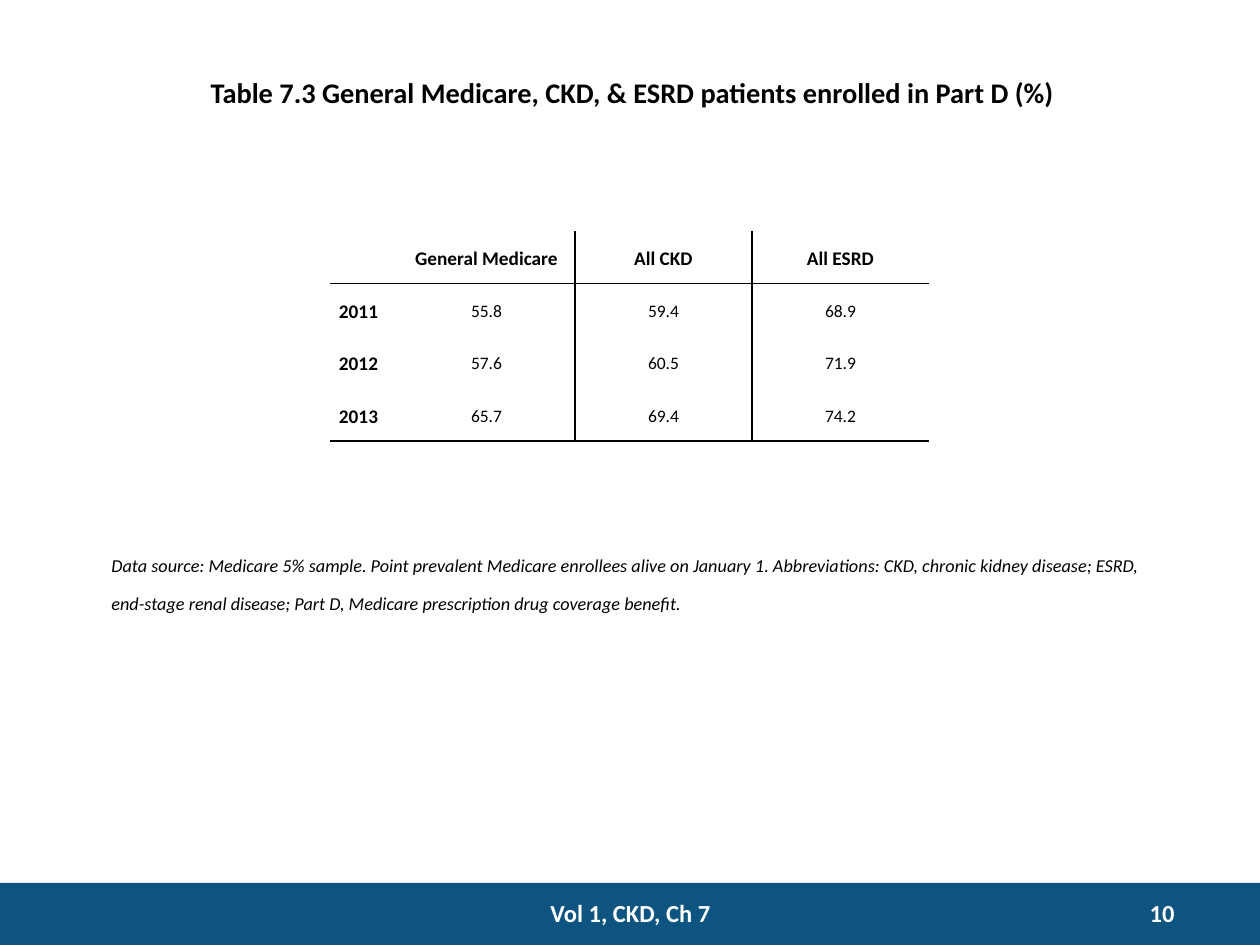
from lxml.etree import SubElement
from pptx import Presentation
from pptx.dml.color import RGBColor
from pptx.enum.shapes import MSO_SHAPE
from pptx.enum.text import MSO_ANCHOR, MSO_AUTO_SIZE, PP_ALIGN
from pptx.oxml.ns import qn
from pptx.util import Inches, Pt

FONT = "Calibri"
COLORS = {"text": "000000", "light": "FFFFFF", "band": "0E5480"}
PIXELS_PER_INCH = 126


def px(length):
    return Inches(length / PIXELS_PER_INCH)


def color(name):
    return RGBColor.from_string(COLORS[name])


def write_text(frame, text, size=14, color_name="text", bold=False, italic=False,
               align=PP_ALIGN.LEFT, spacing=None, raised=False):
    """Put one formatted paragraph into a text frame."""
    paragraph = frame.paragraphs[0]
    paragraph.alignment = align
    paragraph.line_spacing = spacing
    run = paragraph.add_run()
    run.text = text
    font = run.font
    font.name, font.size = FONT, Pt(size)
    font.bold, font.italic = bold, italic
    font.color.rgb = color(color_name)
    if raised:
        run._r.get_or_add_rPr().set("baseline", "30000")


class SlideBuilder:
    def __init__(self, presentation):
        self.slide = presentation.slides.add_slide(presentation.slide_layouts[5])

    def band(self, left, top, width, height):
        shape = self.slide.shapes.add_shape(
            MSO_SHAPE.RECTANGLE, px(left), px(top), px(width), px(height))
        shape.shadow.inherit = False
        shape.fill.solid()
        shape.fill.fore_color.rgb = color("band")
        shape.line.fill.background()

    def fill_box(self, shape, text, **style):
        frame = shape.text_frame
        frame.word_wrap = True
        frame.auto_size = MSO_AUTO_SIZE.NONE
        frame.vertical_anchor = MSO_ANCHOR.TOP
        write_text(frame, text, **style)

    def title(self, left, top, width, height, text, **style):
        shape = self.slide.shapes.title
        shape.left, shape.top = px(left), px(top)
        shape.width, shape.height = px(width), px(height)
        self.fill_box(shape, text, **style)

    def text(self, left, top, width, height, text, **style):
        shape = self.slide.shapes.add_textbox(px(left), px(top), px(width), px(height))
        self.fill_box(shape, text, **style)

    def borders(self, cell, sides):
        """Draw the given sides (of L, R, T, B) and clear the others."""
        properties = cell._tc.get_or_add_tcPr()
        for side in "LRTB":
            line = SubElement(properties, qn(f"a:ln{side}"), w=str(Pt(1)))
            if side in sides:
                fill = SubElement(line, qn("a:solidFill"))
                SubElement(fill, qn("a:srgbClr"), val=COLORS["text"])
            else:
                SubElement(line, qn("a:noFill"))

    def table(self, left, top, widths, height, rows):
        last_row, last_column = len(rows) - 1, len(widths) - 1
        table = self.slide.shapes.add_table(
            len(rows), len(widths), px(left), px(top), px(sum(widths)), px(height)).table
        table.first_row = table.horz_banding = False
        for column, width in zip(table.columns, widths):
            column.width = px(width)
        for r, row in enumerate(rows):
            for c, value in enumerate(row):
                cell = table.cell(r, c)
                cell.margin_left = cell.margin_right = px(9)
                cell.margin_top = cell.margin_bottom = 0
                cell.vertical_anchor = MSO_ANCHOR.MIDDLE
                # Rules: under the header, under the last row, between value columns
                sides = "T" if r == 1 else ""
                sides += "B" if r in (0, last_row) else ""
                sides += "L" if c > 1 else ""
                sides += "R" if 0 < c < last_column else ""
                self.borders(cell, sides)
                cell.fill.background()
                heading = r == 0 or c == 0
                write_text(cell.text_frame, value, size=11 if heading else 10,
                           bold=heading, spacing=1.15,
                           align=PP_ALIGN.CENTER if c else PP_ALIGN.LEFT)


def main():
    presentation = Presentation()
    presentation.slide_width, presentation.slide_height = px(1260), px(945)
    builder = SlideBuilder(presentation)

    # Title
    builder.title(2, 63, 1260, 53,
                  "Table 7.3 General Medicare, CKD, & ESRD patients enrolled in Part D (%)",
                  size=28, bold=True, align=PP_ALIGN.CENTER, raised=True)

    # Enrollment table
    builder.table(330, 231, [68, 177, 177, 177], 210, [
        ["", "General Medicare", "All CKD", "All ESRD"],
        ["2011", "55.8", "59.4", "68.9"],
        ["2012", "57.6", "60.5", "71.9"],
        ["2013", "65.7", "69.4", "74.2"],
    ])

    # Data source note
    builder.text(99, 544, 1061, 63,
                 "Data source: Medicare 5% sample. Point prevalent Medicare enrollees alive on "
                 "January 1. Abbreviations: CKD, chronic kidney disease; ESRD, end-stage renal "
                 "disease; Part D, Medicare prescription drug coverage benefit.",
                 size=18, italic=True, raised=True)

    # Footer
    builder.band(0, 883, 1260, 62)
    footer = {"size": 14, "bold": True, "color_name": "light"}
    builder.text(494, 892, 273, 42, "Vol 1, CKD, Ch 7", align=PP_ALIGN.CENTER, **footer)
    builder.text(1061, 892, 126, 38, "10", align=PP_ALIGN.RIGHT, **footer)

    presentation.save("out.pptx")


if __name__ == "__main__":
    main()
